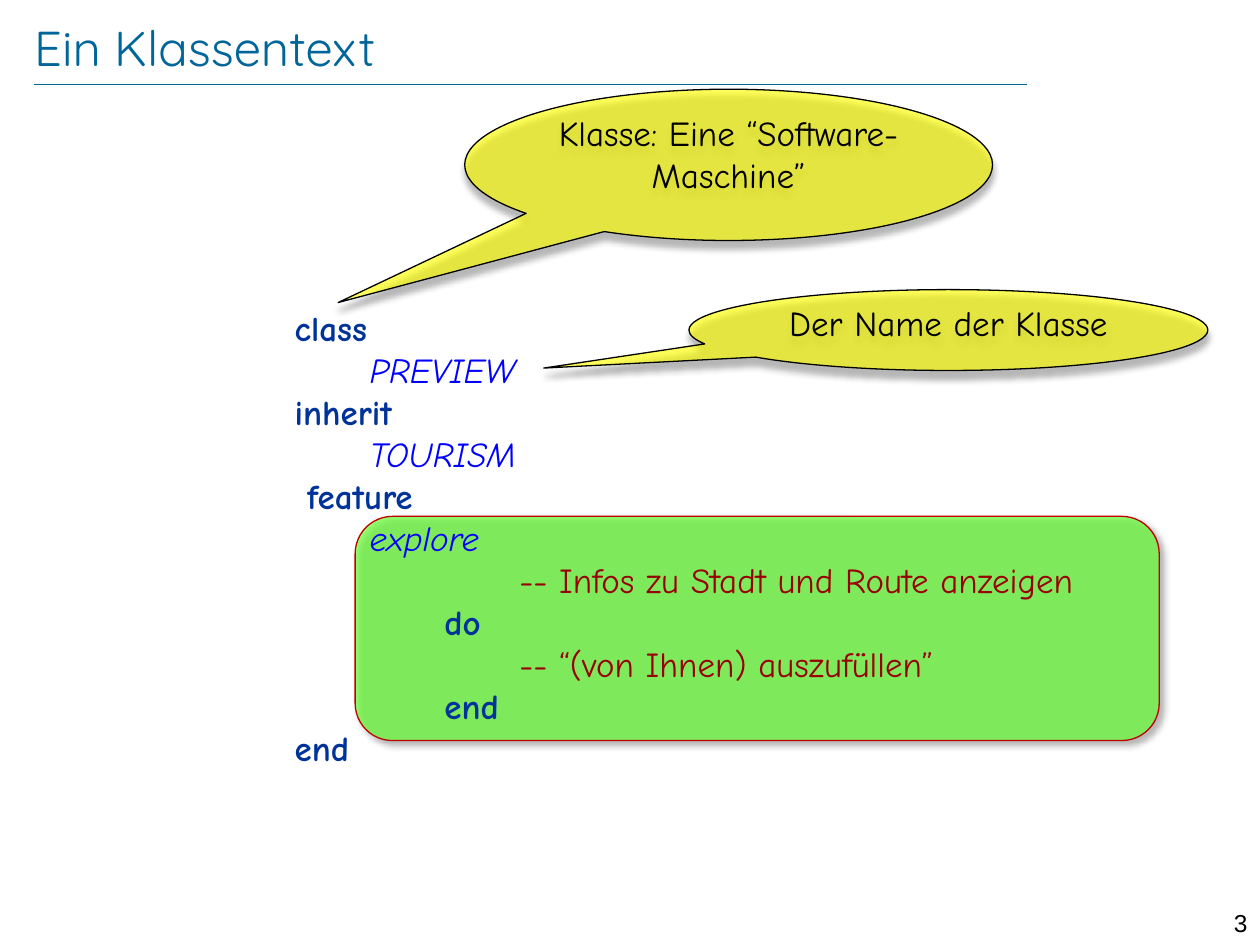
from lxml import etree
from pptx import Presentation
from pptx import util as u
from pptx.dml.color import RGBColor
from pptx.enum import shapes, text
from pptx.oxml.ns import qn

COLORS = {
    "title": "006699", "keyword": "003399", "name": "0000FF", "comment": "990000",
    "method": "66FF33", "method_line": "C00000", "callout": "FFFF00", "black": "000000",
}
KEYWORD = {"color": "keyword", "bold": True}
NAME = {"color": "name", "italic": True}
COMMENT = {"color": "comment"}
TAB_CM = 1.51


def rgb(name):
    return RGBColor.from_string(COLORS[name])


class ClassSlide:
    """Holds the style and the current slide."""

    body_font = "Comic Neue"
    body_size = 20

    def __init__(self, page):
        self.page = page

    def frame(self, shape, inset=None, anchor=text.MSO_ANCHOR.TOP):
        frame = shape.text_frame
        formats = {"word_wrap": True, "auto_size": text.MSO_AUTO_SIZE.NONE,
                   "vertical_anchor": anchor}
        if inset is not None:
            for side in ("left", "top", "right", "bottom"):
                formats["margin_" + side] = u.Cm(inset)
        for key, value in formats.items():
            setattr(frame, key, value)
        return frame

    def span(self, para, words, color, font=None, size=None, bold=False, italic=False):
        span = para.add_run()
        span.text = words
        formats = {"name": font or self.body_font, "size": u.Pt(size or self.body_size),
                   "bold": bold, "italic": italic}
        for key, value in formats.items():
            setattr(span.font, key, value)
        span.font.color.rgb = rgb(color)

    def title(self, words, left, top, width, height):
        shape = self.page.shapes.title
        for key, value in zip(("left", "top", "width", "height"), (left, top, width, height)):
            setattr(shape, key, u.Cm(value))
        para = self.frame(shape, 0, text.MSO_ANCHOR.MIDDLE).paragraphs[0]
        para.alignment = text.PP_ALIGN.LEFT
        self.span(para, words, "title", "Quicksand", 28)

    def rule(self, left, right, y):
        line = self.page.shapes.add_connector(
            shapes.MSO_CONNECTOR.STRAIGHT, u.Cm(left), u.Cm(y), u.Cm(right), u.Cm(y))
        line.line.color.rgb = rgb("title")
        line.line.width = u.Pt(0.25)
        etree.SubElement(line._element.spPr, qn("a:effectLst"))

    def panel(self, kind, place, fill, line, opacity, shadow):
        shape = self.page.shapes.add_shape(kind, *map(u.Cm, place))
        shape.fill.solid()
        shape.fill.fore_color.rgb = rgb(fill)
        shape.line.color.rgb = rgb(line)
        shape.line.width = u.Pt(0.75)
        properties = shape._element.spPr
        color = properties.find(qn("a:solidFill"))[0]
        etree.SubElement(color, qn("a:alpha"), val=str(opacity * 1000))

        # Soft outer shadow
        shape.shadow.inherit = False
        shadow_opacity, blur, distance, angle = shadow
        outer = etree.SubElement(
            properties.find(qn("a:effectLst")), qn("a:outerShdw"),
            blurRad=str(u.Pt(blur)), dist=str(u.Pt(distance)),
            dir=str(angle * 60000), algn="ctr", rotWithShape="0")
        black = etree.SubElement(outer, qn("a:srgbClr"), val=COLORS["black"])
        etree.SubElement(black, qn("a:alpha"), val=str(shadow_opacity * 1000))
        return shape

    def callout(self, words, place, tip):
        shape = self.panel(shapes.MSO_SHAPE.OVAL_CALLOUT, place, "callout", "black",
                           64, (43, 4, 4, 90))
        for index, value in enumerate(tip):
            shape.adjustments[index] = value
        para = self.frame(shape, 0).paragraphs[0]
        para.alignment = text.PP_ALIGN.CENTER
        self.span(para, words, "black")

    def code(self, lines, place):
        frame = self.frame(self.page.shapes.add_textbox(*map(u.Cm, place)))
        for index, (words, style) in enumerate(lines):
            para = frame.add_paragraph() if index else frame.paragraphs[0]
            para.line_spacing = 0.8
            if index:
                para.space_before = u.Pt(4.8)
            tabs = etree.SubElement(para._p.get_or_add_pPr(), qn("a:tabLst"))
            for stop in range(1, 4):
                etree.SubElement(tabs, qn("a:tab"), pos=str(u.Cm(stop * TAB_CM)), algn="l")
            self.span(para, words, **style)

    def page_number(self, number, place):
        para = self.frame(self.page.shapes.add_textbox(*map(u.Cm, place))).paragraphs[0]
        para.alignment = text.PP_ALIGN.RIGHT
        self.span(para, number, "black", "Arial", 14)


def main():
    deck = Presentation()
    deck.slide_width, deck.slide_height = u.Cm(25.4), u.Cm(19.05)
    slide = ClassSlide(deck.slides.add_slide(deck.slide_layouts[5]))

    # Heading and page number
    slide.title("Ein Klassentext", 0.69, 0.33, 22.07, 1.22)
    slide.rule(0.69, 20.7, 1.7)
    slide.page_number("3", (24, 18.19, 1.4, 0.61))

    # Highlighted method behind the class text
    slide.panel(shapes.MSO_SHAPE.FLOWCHART_ALTERNATE_PROCESS, (7.16, 10.41, 16.21, 4.52),
                "method", "method_line", 70, (40, 4, 3, 45))
    slide.code([
        ("class", KEYWORD),
        ("\tPREVIEW", NAME),
        ("inherit", KEYWORD),
        ("\tTOURISM", NAME),
        (" feature", KEYWORD),
        ("\texplore", NAME),
        ("\t\t\t-- Infos zu Stadt und Route anzeigen", COMMENT),
        ("\t\tdo", KEYWORD),
        ("\t\t\t-- “(von Ihnen) auszufüllen”", COMMENT),
        ("\t\tend", KEYWORD),
        ("end", KEYWORD),
    ], (5.69, 6.22, 18.72, 8.99))

    # Explanations
    slide.callout("Klasse: Eine “Software-Maschine”", (9.37, 1.8, 10.64, 3.05), (-0.74, 0.91))
    slide.callout("Der Name der Klasse", (13.89, 5.84, 10.46, 1.63), (-0.78, 0.47))

    deck.save("out.pptx")


if __name__ == "__main__":
    main()
